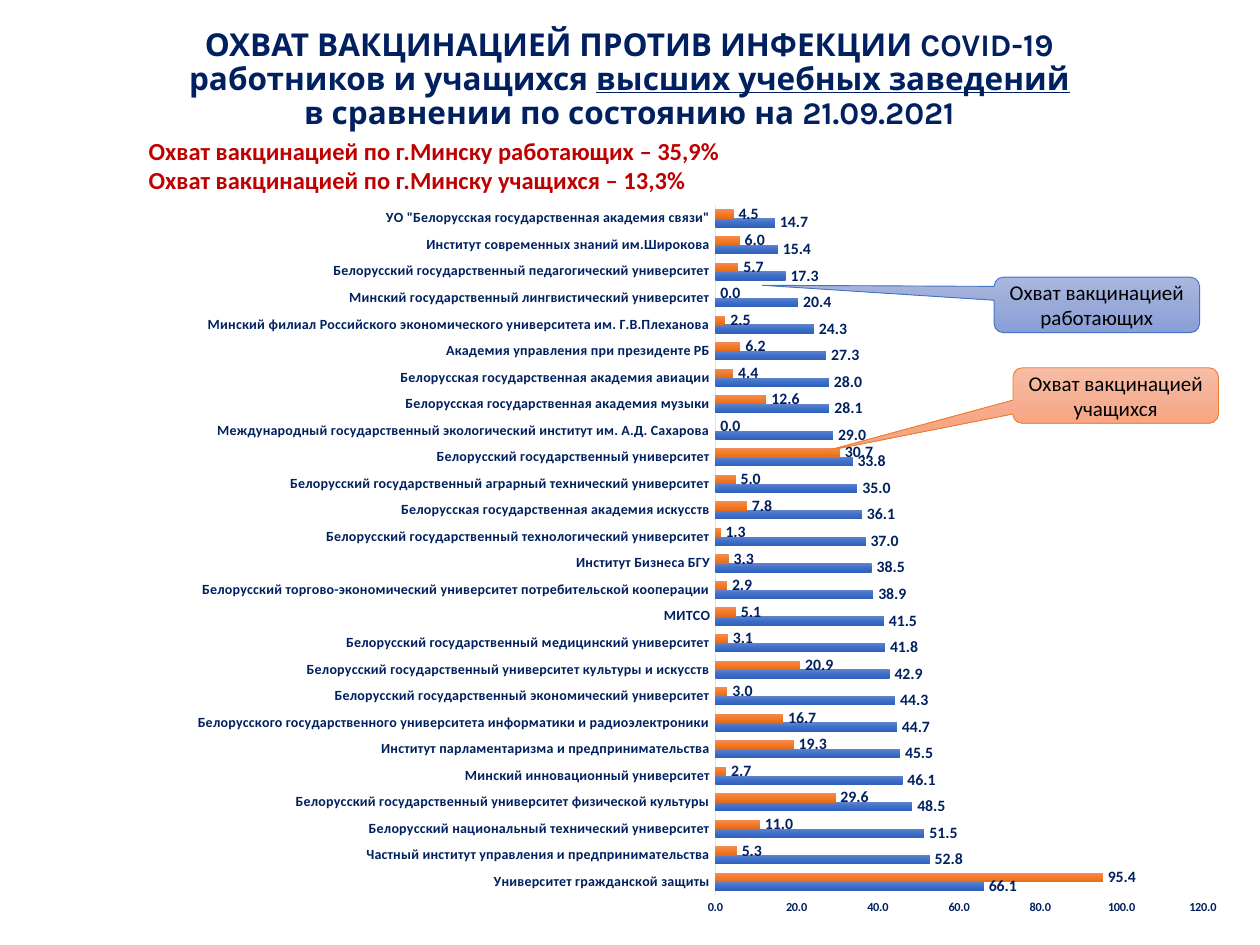
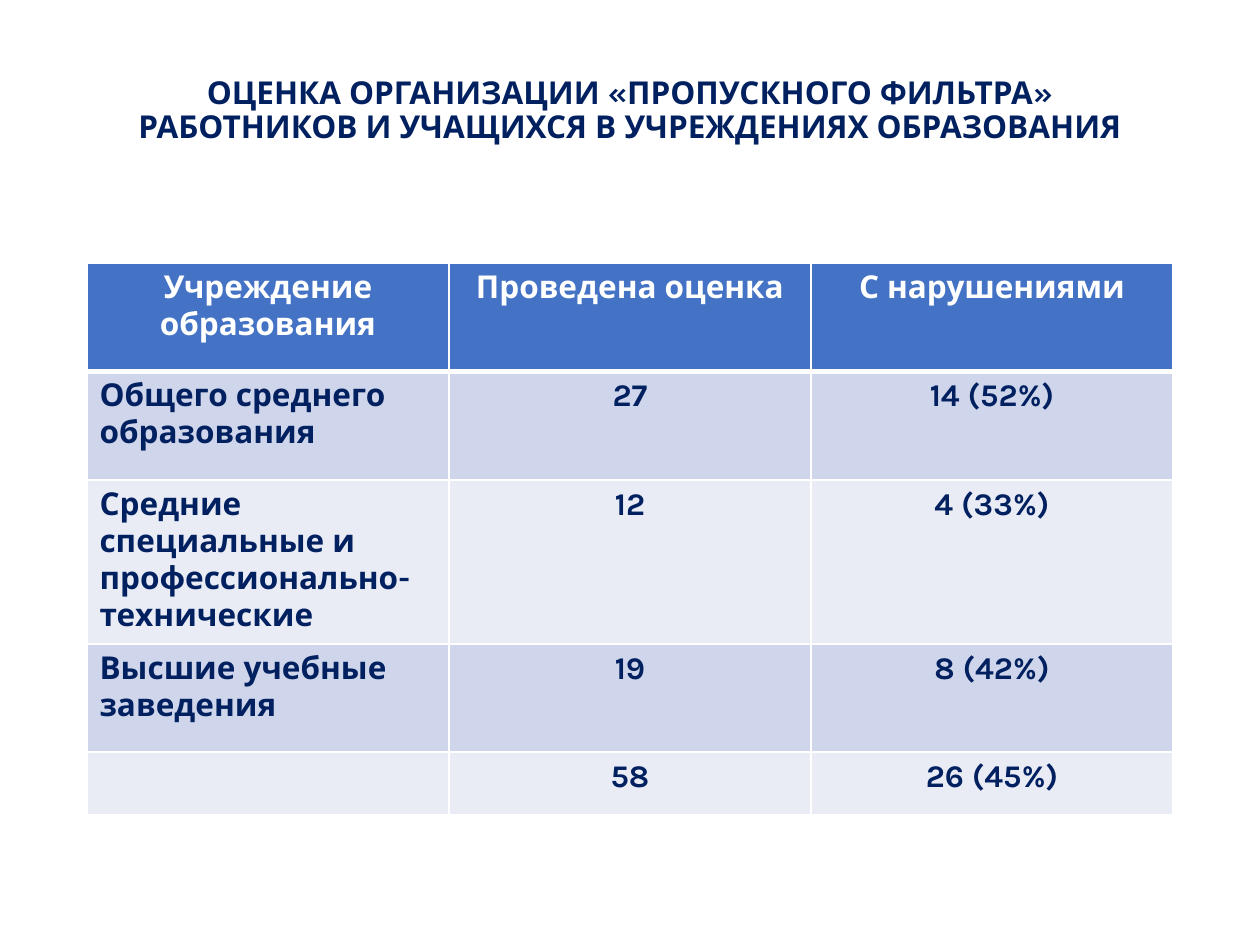
from copy import deepcopy

from lxml import etree
from pptx import Presentation
from pptx.chart.data import CategoryChartData
from pptx.dml.color import RGBColor
from pptx.enum.chart import XL_CHART_TYPE, XL_LABEL_POSITION, XL_TICK_MARK
from pptx.enum.shapes import MSO_SHAPE
from pptx.enum.text import MSO_ANCHOR, PP_ALIGN
from pptx.oxml import parse_xml
from pptx.oxml.ns import nsdecls, qn
from pptx.util import Pt

BAR = XL_CHART_TYPE.BAR_CLUSTERED
OUTER = XL_LABEL_POSITION.OUTSIDE_END
NONE = XL_TICK_MARK.NONE
BUBBLE = MSO_SHAPE.ROUNDED_RECTANGULAR_CALLOUT
MIDDLE = MSO_ANCHOR.MIDDLE
LEFT, CENTER = PP_ALIGN.LEFT, PP_ALIGN.CENTER


class Theme:
    navy = RGBColor.from_string("002060")
    white = RGBColor.from_string("FFFFFF")
    blue = RGBColor.from_string("4472C4")
    orange = RGBColor.from_string("ED7D31")
    axis = RGBColor.from_string("E0E5EB")
    bands = [RGBColor.from_string(c) for c in ("CFD5EA", "E9EBF5")]
    title = {"name": "Karla", "size": Pt(18), "bold": True, "rgb": navy}
    head = {**title, "rgb": white}
    note = {"name": "Calibri", "size": Pt(14), "bold": True, "rgb": RGBColor.from_string("C00000")}
    call = {"name": "Calibri", "size": Pt(12), "bold": False, "rgb": RGBColor.from_string("000000")}
    chart = {"name": "Calibri", "size": Pt(10), "bold": True, "rgb": navy}
    label = {**chart, "size": Pt(9)}
    group = {**chart, "size": Pt(8)}
    scale = {**chart, "size": Pt(7)}
    heading = {"alignment": CENTER, "line_spacing": 0.9}
    bluebar = ("6183CB", "3E70CA", "3062BB")
    redbar = ("F18C57", "F67B28", "E56C19")
    bluebox = ("A8B7DF", "9AABD9", "889ED7")
    redbox = ("F7BDA5", "F5B196", "F8A582")


def dress(font, look):
    for key, val in look.items():
        if key == "rgb":
            font.color.rgb = val
        else:
            setattr(font, key, val)


def write(frame, lines, look, form):
    frame.word_wrap = True
    for i, line in enumerate(lines):
        para = frame.paragraphs[0] if i == 0 else frame.add_paragraph()
        for key, val in form.items():
            setattr(para, key, val)
        for part in line:
            run = para.add_run()
            run.text = part
            dress(run.font, look)


deck = Presentation()
deck.slide_width, deck.slide_height = Pt(720), Pt(540)
blank = deck.slide_layouts[6]

titles = [
    ((14.4, 13, 690.5, 66.2), [
        ["ОХВАТ ВАКЦИНАЦИЕЙ ПРОТИВ ИНФЕКЦИИ COVID-19"],
        ["работников и учащихся ", "высших учебных заведений"],
        ["в сравнении по состоянию на 21.09.2021"]]),
    ((49.7, 28.8, 620.6, 69.8), [
        ["ОЦЕНКА ОРГАНИЗАЦИИ «ПРОПУСКНОГО ФИЛЬТРА» РАБОТНИКОВ И УЧАЩИХСЯ В УЧРЕЖДЕНИЯХ ОБРАЗОВАНИЯ"]]),
]
frames = []
for place, lines in titles:
    slide = deck.slides.add_slide(blank)
    frame = slide.shapes.add_textbox(*map(Pt, place)).text_frame
    frame.vertical_anchor = MIDDLE
    write(frame, lines, Theme.title, Theme.heading)
    frames.append(frame)
frames[0].paragraphs[1].runs[1].font.underline = True
first, second = deck.slides

note = first.shapes.add_textbox(Pt(77.8), Pt(74.2), Pt(345.6), Pt(41)).text_frame
write(note, [["Охват вакцинацией по г.Минску работающих – 35,9%"],
             ["Охват вакцинацией по г.Минску учащихся – 13,3%"]], Theme.note, {"alignment": LEFT})
note.word_wrap = False

rates = [
    ("Университет гражданской защиты", 66.1, 95.4),
    ("Частный институт управления и предпринимательства", 52.8, 5.3),
    ("Белорусский национальный технический университет", 51.5, 11),
    ("Белорусский государственный университет физической культуры", 48.5, 29.6),
    ("Минский инновационный университет", 46.1, 2.7),
    ("Институт парламентаризма и предпринимательства", 45.5, 19.3),
    ("Белорусского государственного университета информатики и радиоэлектроники", 44.7, 16.7),
    ("Белорусский государственный экономический университет", 44.3, 3),
    ("Белорусский государственный университет культуры и искусств", 42.9, 20.9),
    ("Белорусский государственный медицинский университет", 41.8, 3.1),
    ("МИТСО", 41.5, 5.1),
    ("Белорусский торгово-экономический университет потребительской кооперации", 38.9, 2.9),
    ("Институт Бизнеса БГУ", 38.5, 3.3),
    ("Белорусский государственный технологический университет", 37, 1.3),
    ("Белорусская государственная академия искусств", 36.1, 7.8),
    ("Белорусский государственный аграрный технический университет", 35, 5),
    ("Белорусский государственный университет", 33.8, 30.7),
    ("Международный государственный экологический институт им. А.Д. Сахарова", 29, 0),
    ("Белорусская государственная академия музыки", 28.1, 12.6),
    ("Белорусская государственная академия авиации", 28, 4.4),
    ("Академия управления при президенте РБ", 27.3, 6.2),
    ("Минский филиал Российского экономического университета им. Г.В.Плеханова", 24.3, 2.5),
    ("Минский государственный лингвистический университет", 20.4, 0),
    ("Белорусский государственный педагогический университет", 17.3, 5.7),
    ("Институт современных знаний им.Широкова", 15.4, 6),
    ("УО \"Белорусская государственная академия связи\"", 14.7, 4.5),
]
names, staff, pupils = zip(*rates)
data = CategoryChartData(number_format="0.0")
data.categories = names
data.add_series("Работающие", staff)
data.add_series("Учащиеся", pupils)
chart = first.shapes.add_chart(BAR, Pt(100), Pt(108.7), Pt(605.5), Pt(424), data).chart
chart.has_title = chart.has_legend = False
dress(chart.font, Theme.chart)
plot = chart.plots[0]
for key, val in {"gap_width": 100, "overlap": 0, "vary_by_categories": False}.items():
    setattr(plot, key, val)

for axis, look in ((chart.category_axis, Theme.group), (chart.value_axis, Theme.scale)):
    axis.has_major_gridlines = False
    axis.major_tick_mark = axis.minor_tick_mark = NONE
    dress(axis.tick_labels.font, look)
edge = chart.category_axis.format.line
edge.color.rgb, edge.width = Theme.axis, Pt(0.75)
scale = chart.value_axis
scale.minimum_scale, scale.maximum_scale, scale.major_unit = 0, 120, 20
scale.format.line.fill.background()
scale.tick_labels.number_format = "0.0"
scale.tick_labels.number_format_is_linked = False

area = chart._chartSpace.chart.plotArea
for old in area.findall(qn("c:layout")):
    area.remove(old)
layout = parse_xml(f"<c:layout {nsdecls('c')}><c:manualLayout/></c:layout>")
for tag, val in (("layoutTarget", "inner"), ("xMode", "edge"), ("yMode", "edge"),
                 ("x", "0.51"), ("y", "0.02"), ("w", "0.46"), ("h", "0.93")):
    etree.SubElement(layout[0], qn(f"c:{tag}")).set("val", val)
area.insert(0, layout)

shades = []
for series, tones in zip(plot.series, (Theme.bluebar, Theme.redbar)):
    shades.append((series, series.format.fill, tones))
    labels = series.data_labels
    for key, val in {"show_value": True, "number_format": "0.0",
                     "number_format_is_linked": False, "position": OUTER}.items():
        setattr(labels, key, val)
    dress(labels.font, Theme.label)

calls = [
    ("Охват вакцинацией учащихся", 578.9, 210.2, (-1.415, 1.004, 0.167), Theme.redbox, Theme.orange),
    ("Охват вакцинацией работающих", 568.1, 158.4, (-1.628, -0.353, 0.167), Theme.bluebox, Theme.blue),
]
for text, x, y, tail, tones, rim in calls:
    call = first.shapes.add_shape(BUBBLE, Pt(x), Pt(y), Pt(117.4), Pt(31.7))
    call.shadow.inherit = False
    for i, val in enumerate(tail):
        call.adjustments[i] = val
    call.line.color.rgb, call.line.width = rim, Pt(0.5)
    call.text_frame.vertical_anchor = MIDDLE
    write(call.text_frame, [[text]], Theme.call, {"alignment": CENTER})
    shades.append((call, call.fill, tones))

for item, fill, tones in shades:
    fill.gradient()
    fill.gradient_angle = 270
    stops = item._element.xpath(".//a:gsLst")[0]
    while len(stops) > 1:
        stops.remove(stops[-1])
    for _ in tones[1:]:
        stops.append(deepcopy(stops[0]))
    for i, (stop, tone) in enumerate(zip(fill.gradient_stops, tones)):
        stop.position = i / 2
        stop.color.rgb = RGBColor.from_string(tone)

rows = [
    ("Учреждение образования", "Проведена оценка", "С нарушениями"),
    ("Общего среднего образования", "27", "14 (52%)"),
    ("Средние специальные и профессионально-технические", "12", "4 (33%)"),
    ("Высшие учебные заведения", "19", "8 (42%)"),
    ("", "58", "26 (45%)"),
]
highs = (61.9, 61.9, 88.6, 61.9, 36)
table = second.shapes.add_table(len(rows), 3, Pt(49.7), Pt(150.5), Pt(620.6), Pt(sum(highs))).table
for col in table.columns:
    col.width = Pt(206.9)
for r, (row, high) in enumerate(zip(rows, highs)):
    table.rows[r].height = Pt(high)
    for c, text in enumerate(row):
        cell = table.cell(r, c)
        thick = {"lnB": 3} if r == 0 else {"lnT": 3} if r == 1 else {}
        for side in ("lnL", "lnR", "lnT", "lnB"):
            cell._tc.get_or_add_tcPr().append(parse_xml(
                f'<a:{side} {nsdecls("a")} w="{Pt(thick.get(side, 1))}"><a:solidFill>'
                f'<a:srgbClr val="{Theme.white}"/></a:solidFill></a:{side}>'))
        cell.fill.solid()
        cell.fill.fore_color.rgb = Theme.blue if r == 0 else Theme.bands[(r - 1) % 2]
        if text:
            write(cell.text_frame, [[text]], Theme.title if r else Theme.head,
                  {"alignment": LEFT if r and c == 0 else CENTER})

deck.save("out.pptx")
